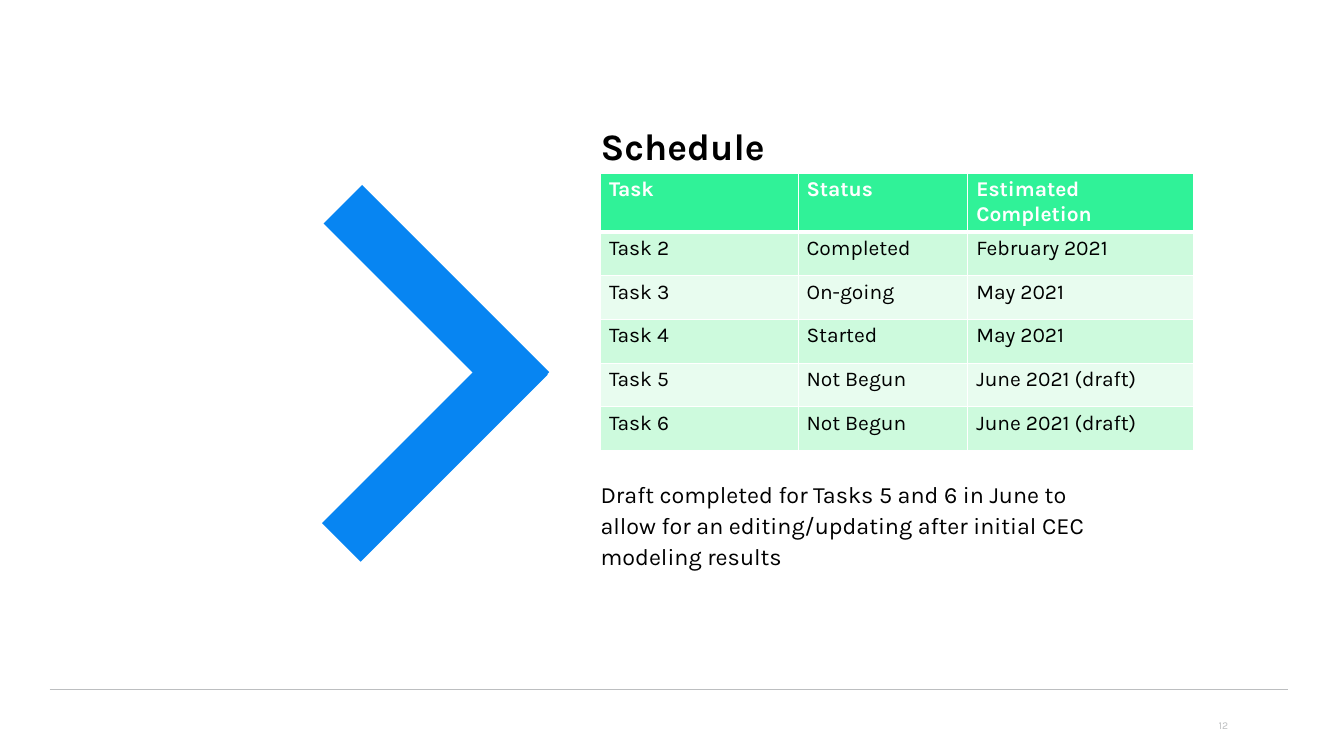
import dataclasses
import pptx
import pptx.util
import pptx.dml.color
import pptx.enum.shapes
import pptx.enum.text
import pptx.oxml.ns
from lxml import etree

Pt = pptx.util.Pt
qn = pptx.oxml.ns.qn
ANCHOR = pptx.enum.text.MSO_ANCHOR
ALIGN = pptx.enum.text.PP_ALIGN


@dataclasses.dataclass(frozen=True)
class Theme:
    font: str = "Karla"
    text: str = "000000"
    paper: str = "FFFFFF"
    accent: str = "0785F2"
    muted: str = "BCBEC0"
    header: str = "30F298"
    bands: tuple = ("CDFADD", "E8FCEF")
    title_size: float = 32
    body_size: float = 20
    table_size: float = 18
    number_size: float = 9


THEME = Theme()
SCHEDULE = [
    ("Task", "Status", "Estimated Completion"),
    ("Task 2", "Completed", "February 2021"),
    ("Task 3", "On-going", "May 2021"),
    ("Task 4", "Started", "May 2021"),
    ("Task 5", "Not Begun", "June 2021 (draft)"),
    ("Task 6", "Not Begun", "June 2021 (draft)"),
]
NOTE = ("Draft completed for Tasks 5 and 6 in June to allow for an "
        "editing/updating after initial CEC modeling results")


def rgb(color):
    return pptx.dml.color.RGBColor.from_string(color)


def style(p, size, color, bold=False):
    p.font.name = THEME.font
    p.font.size = Pt(size)
    p.font.bold = bold
    p.font.color.rgb = rgb(color)


def add_text(s, box, text, size, color, bold=False, anchor=ANCHOR.TOP,
             align=ALIGN.LEFT, spacing=1.0, inset=0):
    tf = s.shapes.add_textbox(*map(Pt, box)).text_frame
    tf.word_wrap = True
    tf.vertical_anchor = anchor
    tf.margin_left = tf.margin_right = Pt(inset)
    p = tf.paragraphs[0]
    p.text = text
    p.alignment = align
    p.line_spacing = spacing
    style(p, size, color, bold)


def add_chevron(s, box):
    left, top, width, height = box
    length, thickness = 226.8, 46.8
    reach = (length + thickness) / 2 * 0.5 ** 0.5
    bars = [(left + reach, top + height - reach, 135),
            (left + width - reach, top + reach, 225)]
    for x, y, angle in bars:
        sp = s.shapes.add_shape(
            pptx.enum.shapes.MSO_SHAPE.RECTANGLE, Pt(x - length / 2),
            Pt(y - thickness / 2), Pt(length), Pt(thickness))
        sp.rotation = angle
        sp.shadow.inherit = False
        sp.fill.solid()
        sp.fill.fore_color.rgb = rgb(THEME.accent)
        sp.line.fill.background()


def set_borders(cell, top, bottom):
    tcPr = cell._tc.get_or_add_tcPr()
    for side, width in zip("LRTB", (1, 1, top, bottom)):
        ln = etree.SubElement(tcPr, qn(f"a:ln{side}"), w=str(Pt(width)))
        fill = etree.SubElement(ln, qn("a:solidFill"))
        etree.SubElement(fill, qn("a:srgbClr"), val=THEME.paper)


def add_schedule_table(s, box):
    shares = (235, 202, 268)
    header_height = 49
    row_height = (box[3] - header_height) / (len(SCHEDULE) - 1)
    table = s.shapes.add_table(len(SCHEDULE), len(shares), *map(Pt, box)).table
    for column, share in zip(table.columns, shares):
        column.width = Pt(box[2] * share / sum(shares))
    for i, texts in enumerate(SCHEDULE):
        head = i == 0
        table.rows[i].height = Pt(header_height if head else row_height)
        for j, text in enumerate(texts):
            cell = table.cell(i, j)
            set_borders(cell, 3 if i == 1 else 1, 3 if head else 1)
            cell.fill.solid()
            cell.fill.fore_color.rgb = rgb(
                THEME.header if head else THEME.bands[(i - 1) % 2])
            p = cell.text_frame.paragraphs[0]
            p.text = text
            style(p, THEME.table_size, THEME.paper if head else THEME.text, head)


def add_schedule(s, box):
    left, top, width, height = box
    title_height, table_height, note_top = 81.4, 236.5, 339
    add_text(s, (left, top, width, title_height), "Schedule",
             THEME.title_size, THEME.text, True, ANCHOR.BOTTOM, spacing=0.9)
    add_schedule_table(s, (left, top + title_height, 508, table_height))
    add_text(s, (left, top + note_top, width, height - note_top), NOTE,
             THEME.body_size, THEME.text, spacing=1.1)


def add_footer(s, box):
    left, top, width, height = box
    c = s.shapes.add_connector(pptx.enum.shapes.MSO_CONNECTOR.STRAIGHT,
                               Pt(left), Pt(top), Pt(left + width), Pt(top))
    c.line.color.rgb = rgb(THEME.muted)
    c.line.width = Pt(0.5)
    etree.SubElement(c._element.spPr, qn("a:effectLst"))
    add_text(s, (left + 789.8, top + 13.7, 227.5, height - 13.7), "12",
             THEME.number_size, THEME.muted, anchor=ANCHOR.MIDDLE,
             align=ALIGN.RIGHT, inset=7.2)


def main():
    prs = pptx.Presentation()
    prs.slide_width, prs.slide_height = Pt(1152), Pt(648)
    s = prs.slides.add_slide(prs.slide_layouts[6])
    add_footer(s, (42.5, 590.4, 1061.3, 48.3))
    add_chevron(s, (276, 158.5, 194.8, 323))
    add_schedule(s, (514.8, 67, 437, 407.5))
    prs.save("out.pptx")


if __name__ == "__main__":
    main()
